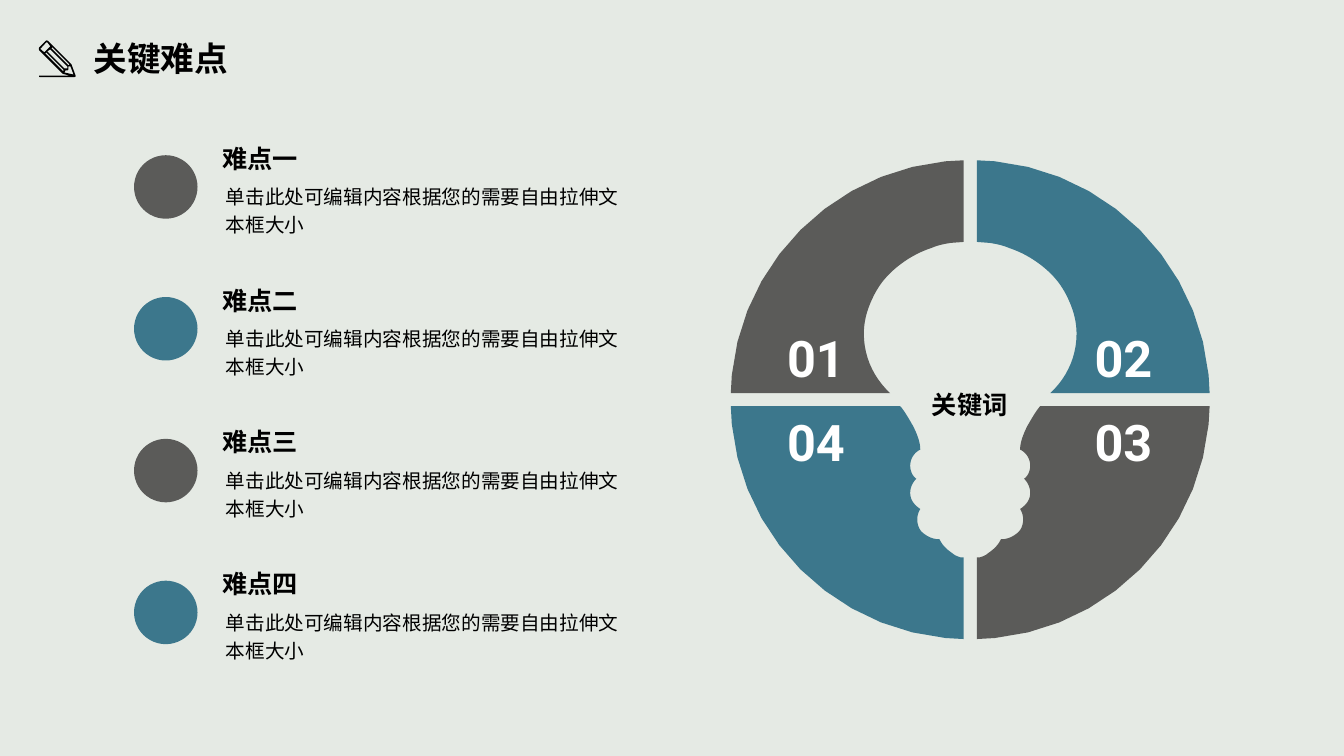
from lxml import etree
from pptx import Presentation
from pptx.dml.color import RGBColor
from pptx.enum.shapes import MSO_SHAPE
from pptx.enum.text import MSO_AUTO_SIZE, PP_ALIGN
from pptx.oxml.ns import qn
from pptx.util import Inches, Pt

PALE = RGBColor(0xE5, 0xEA, 0xE4)
GREY = RGBColor(0x5B, 0x5B, 0x59)
TEAL = RGBColor(0x3C, 0x77, 0x8C)
BLACK = RGBColor(0, 0, 0)
WHITE = RGBColor(255, 255, 255)

CELL = 0.1
COLUMNS, ROWS = 133.33, 75
CURVE_STEPS = 10
MIRROR_COLUMN = 96.25

UPPER_QUARTER = [
    (95.6, 15.9), (95.6, 24), (94.3, 24.1),
    (93.7, 24.2, 93.1, 24.3, 92.4, 24.6), (91.2, 25, 90.1, 25.6, 89.1, 26.4),
    (88.1, 27.2, 87.3, 28.1, 86.7, 29.3), (86.1, 30.5, 85.7, 31.7, 85.7, 33.1),
    (85.7, 35.2, 86.5, 37.1, 87.9, 38.6), (88.3, 39), (72.5, 39), (72.6, 37.2),
    (73.7, 26, 82.6, 17.1, 93.8, 16),
]
LOWER_QUARTER = [
    (72.5, 40.3), (89.3, 40.3), (89.4, 40.4),
    (89.8, 40.9, 90.2, 41.6, 90.6, 42.3), (91, 43.1, 91.3, 43.9, 91.3, 44.6),
    (90.7, 44.9, 90.3, 45.5, 90.3, 46.2), (90.3, 46.7, 90.5, 47.2, 90.9, 47.5),
    (90.5, 47.9, 90.3, 48.4, 90.3, 48.9), (90.3, 49.6, 90.7, 50.1, 91.3, 50.5),
    (91.1, 50.8, 91, 51.2, 91, 51.5), (91, 52.1, 91.2, 52.6, 91.6, 52.9),
    (92.1, 53.3, 92.6, 53.5, 93.2, 53.5), (93.5, 54.1, 93.9, 54.5, 94.5, 54.9),
    (94.7, 55.1, 95, 55.2, 95.3, 55.3), (95.6, 55.3), (95.6, 63.4), (93.8, 63.3),
    (82.6, 62.2, 73.7, 53.3, 72.6, 42.1),
]
PENCIL = [
    [(7.5, 7.6), (7.5, 7.5), (7.1, 6.4), (4.8, 4.1), (4.75, 4.05, 4.65, 3.95, 4.5, 4.1),
     (3.9, 4.7), (3.85, 4.8, 3.85, 4.9, 3.9, 5), (6.2, 7.3), (6.3, 7.35), (6.9, 7.5),
     (3.95, 7.5), (3.85, 7.5, 3.85, 7.65, 3.95, 7.65), (7.4, 7.65)],
    [(7.3, 7.4), (6.4, 7.2), (6.5, 7), (6.7, 7), (6.8, 6.9), (6.8, 6.6), (7, 6.6)],
    [(5.2, 4.7), (6.9, 6.4), (6.8, 6.5), (5.1, 4.8)],
    [(5, 4.9), (6.7, 6.6), (6.7, 6.8), (6.4, 6.8), (4.7, 5.1)],
    [(4, 4.85), (4.1, 4.75), (4.6, 4.2), (4.7, 4.2), (5, 4.6), (4.4, 5.2)],
    [(4.6, 5.2), (6.3, 6.9), (6.3, 7.1), (4.5, 5.3)],
]


def trace(outline):
    points = [outline[0]]
    for piece in outline[1:]:
        if len(piece) == 2:
            points.append(piece)
            continue
        knots = [points[-1], piece[0:2], piece[2:4], piece[4:6]]
        for step in range(1, CURVE_STEPS + 1):
            t = step / CURVE_STEPS
            weights = ((1 - t) ** 3, 3 * t * (1 - t) ** 2, 3 * t * t * (1 - t), t ** 3)
            points.append(tuple(
                sum(weight * knot[axis] for weight, knot in zip(weights, knots))
                for axis in (0, 1)))
    return points


def mirror(points):
    return [(2 * MIRROR_COLUMN - column, row) for column, row in points]


class Page:
    font = "Noto Sans CJK SC"

    def __init__(self, deck):
        self.shapes = deck.slides.add_slide(deck.slide_layouts[6]).shapes

    @staticmethod
    def cells(*counts):
        return [Inches(count * CELL) for count in counts]

    @staticmethod
    def paint(shape, color):
        shape.shadow.inherit = False
        shape.fill.solid()
        shape.fill.fore_color.rgb = color
        shape.line.fill.background()

    def block(self, kind, place, color):
        self.paint(self.shapes.add_shape(kind, *self.cells(*place)), color)

    def outline(self, contours, color):
        builder = None
        for contour in contours:
            first, *others = [self.cells(*point) for point in contour]
            if builder is None:
                builder = self.shapes.build_freeform(*first, scale=1.0)
            else:
                builder.move_to(*first)
            builder.add_line_segments(others, close=True)
        self.paint(builder.convert_to_shape(), color)

    def text(self, words, place, size, color=BLACK, bold=True, font=None,
             wrap=True, grow=True, inset=True):
        box = self.shapes.add_textbox(*self.cells(*place))
        frame = box.text_frame
        frame.word_wrap = wrap
        frame.auto_size = MSO_AUTO_SIZE.SHAPE_TO_FIT_TEXT if grow else MSO_AUTO_SIZE.NONE
        if not inset:
            frame.margin_left = frame.margin_right = 0
            frame.margin_top = frame.margin_bottom = 0
        frame.text = words
        para = frame.paragraphs[0]
        span = para.runs[0]
        span.font.size = Pt(size)
        span.font.bold = bold
        span.font.color.rgb = color
        span.font.name = font or self.font
        properties = span._r.get_or_add_rPr()
        etree.SubElement(properties, qn("a:ea")).set("typeface", span.font.name)
        return para


def draw_bulb(page):
    upper, lower = trace(UPPER_QUARTER), trace(LOWER_QUARTER)
    quarters = [
        ("01", upper, GREY, 77.1, 32),
        ("02", mirror(upper), TEAL, 107.6, 32),
        ("04", lower, TEAL, 77.1, 40.3),
        ("03", mirror(lower), GREY, 107.6, 40.3),
    ]
    for number, points, color, column, row in quarters:
        page.outline([points], color)
        page.text(number, (column, row, 7.8, 7.1), 36, WHITE, font="Roboto", wrap=False)
    keyword = page.text("关键词", (88.7, 38, 15, 3.3), 18, font="Arial", inset=False)
    keyword.alignment = PP_ALIGN.CENTER
    keyword.line_spacing = 1.2


def draw_points(page):
    for index, numeral in enumerate("一二三四"):
        row = 13.7 + index * 14.07
        page.block(MSO_SHAPE.OVAL, (13.3, row + 1.7, 6.3, 6.3), (GREY, TEAL)[index % 2])
        page.text("难点" + numeral, (21.1, row, 18.4, 4), 18)
        detail = page.text("单击此处可编辑内容根据您的需要自由拉伸文本框大小",
                           (22.4, row + 4.2, 40.2, 5.5), 14,
                           bold=False, grow=False, inset=False)
        detail.line_spacing = 1.2
        detail.space_after = Pt(6)


def main():
    deck = Presentation()
    deck.slide_width, deck.slide_height = Page.cells(COLUMNS, ROWS)
    page = Page(deck)
    page.block(MSO_SHAPE.RECTANGLE, (0, 0, COLUMNS, ROWS), PALE)
    draw_bulb(page)
    draw_points(page)
    page.text("关键难点", (8.3, 3.3, 25.6, 5), 24)
    page.outline([trace(contour) for contour in PENCIL], BLACK)
    deck.save("out.pptx")


if __name__ == "__main__":
    main()
